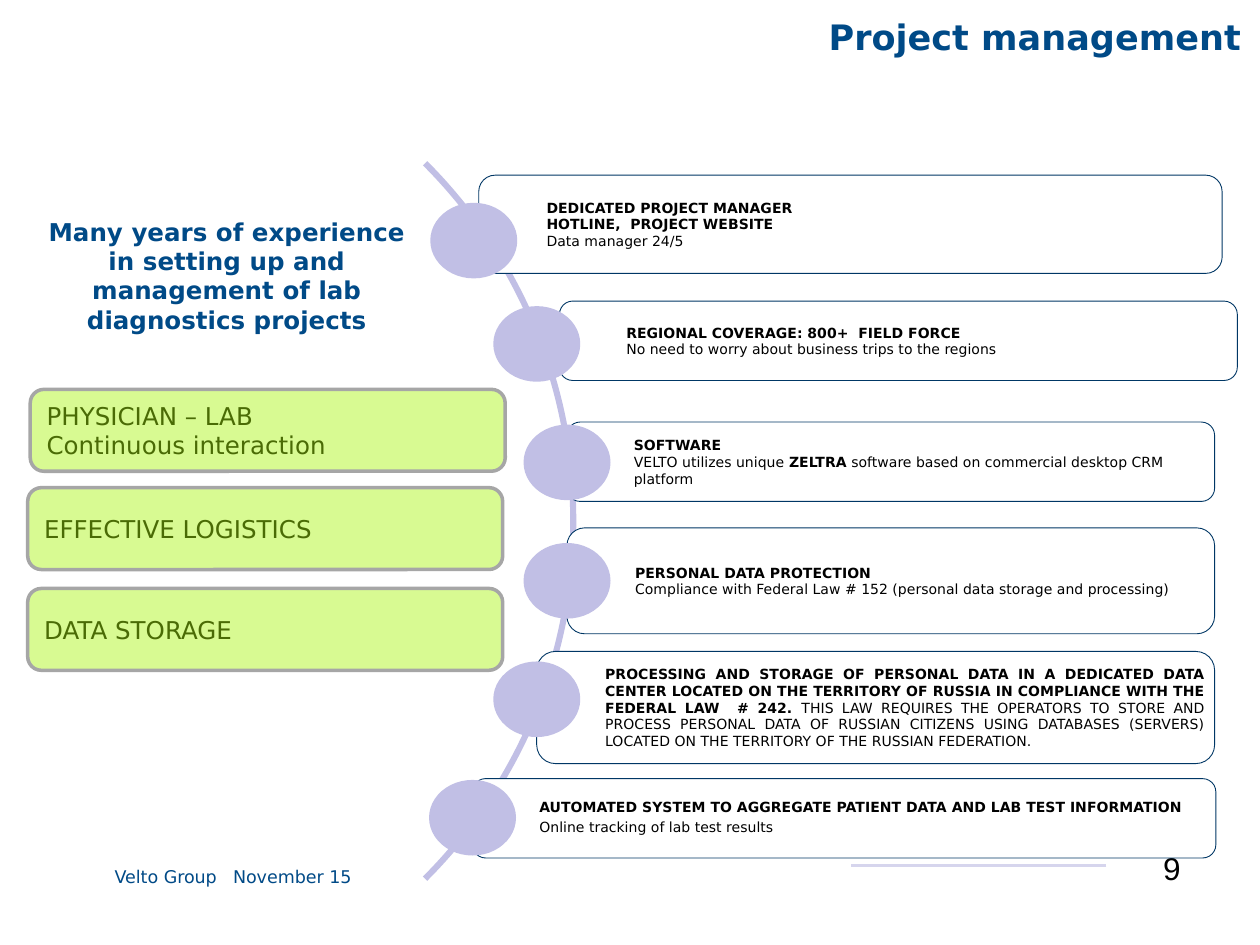
"""Build the project management slide with an arc of six service cards."""
import pptx
import pptx.dml.color
import pptx.enum.shapes
import pptx.enum.text
import pptx.oxml.ns
import pptx.util
from lxml import etree
from pptx.util import Inches

SHAPE = pptx.enum.shapes.MSO_SHAPE
ALIGN = pptx.enum.text.PP_ALIGN
ANCHOR = pptx.enum.text.MSO_ANCHOR
NAVY, LILAC, BLACK = "004A87", "C1BFE5", "000000"


def paint(color_format, color):
    """Apply a hex colour to a fill, line or font colour."""
    color_format.rgb = pptx.dml.color.RGBColor.from_string(color)


def write(frame, paragraphs, size, color, align=ALIGN.LEFT, anchor=ANCHOR.MIDDLE,
          insets=(0.1, 0.05, 0.1, 0.05), font="DejaVu Sans"):
    """Fill a text frame with paragraphs given as lists of (text, bold) runs."""
    frame.word_wrap = True
    frame.auto_size = pptx.enum.text.MSO_AUTO_SIZE.NONE
    frame.vertical_anchor = anchor
    (frame.margin_left, frame.margin_top,
     frame.margin_right, frame.margin_bottom) = map(Inches, insets)
    for index, runs in enumerate(paragraphs):
        para = frame.add_paragraph() if index else frame.paragraphs[0]
        para.alignment = align
        para.font.size = pptx.util.Pt(size)
        para.font.name = font
        paint(para.font.color, color)
        if len({bold for text, bold in runs}) == 1:
            para.font.bold = runs[0][1]
        for text, bold in runs:
            span = para.add_run()
            span.text = text
            if len(runs) > 1:
                span.font.bold = bold


deck = pptx.Presentation()
deck.slide_width, deck.slide_height = Inches(10), Inches(7.5)
page = deck.slides.add_slide(deck.slide_layouts[5])
shapes = page.shapes

title = shapes.title
title.left, title.top, title.width, title.height = map(Inches, (3.54, -0.02, 6.41, 1.73))
write(title.text_frame, [[("Project management", True)]], 20, NAVY, ALIGN.RIGHT,
      ANCHOR.TOP, (0, 0.2, 0.1, 0))
title.text_frame.paragraphs[0].line_spacing = pptx.util.Pt(20)

footers = [
    (0.91, 0.96, "Velto Group", 10, NAVY, ALIGN.LEFT, "DejaVu Sans"),
    (1.85, 0.94, "November 15", 10, NAVY, ALIGN.LEFT, "DejaVu Sans"),
    (8.94, 0.43, "9", 18, BLACK, ALIGN.RIGHT, "Arial"),
]
for left, width, text, size, color, align, font in footers:
    box = shapes.add_textbox(Inches(left), Inches(6.69), Inches(width), Inches(0.35))
    write(box.text_frame, [[(text, False)]], size, color, align, ANCHOR.BOTTOM,
          (0, 0, 0, 0), font)

rule = shapes.add_connector(pptx.enum.shapes.MSO_CONNECTOR.STRAIGHT,
                            Inches(8.78), Inches(6.87), Inches(6.75), Inches(6.87))
paint(rule.line.color, "D6D5ED")
rule.line.width = pptx.util.Pt(2)
etree.SubElement(rule._element.spPr, pptx.oxml.ns.qn("a:effectLst"))

arc = shapes.add_shape(SHAPE.ARC, Inches(-3.48), Inches(0.12), Inches(8.03), Inches(8.03))
arc.shadow.inherit = False
arc.adjustments[0] = 315 * 0.6
arc.adjustments[1] = 45 * 0.6
arc.fill.background()
paint(arc.line.color, LILAC)
arc.line.width = pptx.util.Pt(3.5)

cards = [
    (3.8, 1.39, 5.9, 0.78, 3.76, 1.91,
     [[("DEDICATED PROJECT MANAGER", True)], [("HOTLINE,  PROJECT WEBSITE", True)],
      [("Data manager 24/5", False)]]),
    (4.44, 2.39, 5.38, 0.63, 4.26, 2.73,
     [[("REGIONAL COVERAGE: 800+  FIELD FORCE", True)],
      [("No need to worry about business trips to the regions", False)]]),
    (4.5, 3.35, 5.14, 0.63, 4.5, 3.67,
     [[("SOFTWARE", True)],
      [("VELTO utilizes unique ", False), ("ZELTRA", True),
       (" software based on commercial desktop CRM platform", False)]]),
    (4.5, 4.19, 5.14, 0.84, 4.5, 4.61,
     [[("PERSONAL DATA PROTECTION", True)],
      [("Compliance with Federal Law # 152 (personal data storage and processing)", False)]]),
    (4.26, 5.17, 5.38, 0.89, 4.26, 5.55,
     [[("PROCESSING AND STORAGE OF PERSONAL DATA IN A DEDICATED DATA CENTER LOCATED ON "
        "THE TERRITORY OF RUSSIA IN COMPLIANCE WITH THE FEDERAL LAW  # 242. ", True),
       ("THIS LAW REQUIRES THE OPERATORS TO STORE AND PROCESS PERSONAL DATA OF RUSSIAN "
        "CITIZENS USING DATABASES (SERVERS) LOCATED ON THE TERRITORY OF THE RUSSIAN "
        "FEDERATION.", False)]]),
    (3.75, 6.18, 5.9, 0.63, 3.75, 6.49,
     [[("AUTOMATED SYSTEM TO AGGREGATE PATIENT DATA AND LAB TEST INFORMATION", True)],
      [("Online tracking of lab test results", False)]]),
]
dot_width, dot_height = 0.69, 0.6
for left, top, width, height, dot_x, dot_y, paragraphs in cards:
    card = shapes.add_shape(SHAPE.ROUNDED_RECTANGLE, Inches(left), Inches(top),
                            Inches(width), Inches(height))
    card.shadow.inherit = False
    card.fill.solid()
    paint(card.fill.fore_color, "FFFFFF")
    paint(card.line.color, "003765")
    card.line.width = pptx.util.Pt(0.5)
    align = ALIGN.JUSTIFY if len(paragraphs) == 1 else ALIGN.LEFT
    write(card.text_frame, paragraphs, 8, BLACK, align, insets=(0.5, 0.03, 0.03, 0.03))

    dot = shapes.add_shape(SHAPE.OVAL, Inches(dot_x - dot_width / 2),
                           Inches(dot_y - dot_height / 2),
                           Inches(dot_width), Inches(dot_height))
    dot.shadow.inherit = False
    dot.fill.solid()
    paint(dot.fill.fore_color, LILAC)
    dot.line.fill.background()

for para in card.text_frame.paragraphs:
    para.line_spacing = 0.9
    para.space_after = pptx.util.Pt(3)

claim = shapes.add_textbox(Inches(0.16), Inches(1.67), Inches(3.28), Inches(0.81))
write(claim.text_frame,
      [[("Many years of experience in setting up and management of lab diagnostics projects",
         True)]], 14, NAVY, ALIGN.CENTER, ANCHOR.TOP)

strengths = [
    (0.24, 3.09, ["PHYSICIAN – LAB", "Continuous interaction"]),
    (0.22, 3.87, ["EFFECTIVE LOGISTICS"]),
    (0.22, 4.67, ["DATA STORAGE"]),
]
for left, top, lines in strengths:
    strength = shapes.add_shape(SHAPE.ROUNDED_RECTANGLE, Inches(left), Inches(top),
                                Inches(3.77), Inches(0.65))
    strength.shadow.inherit = False
    strength.fill.solid()
    paint(strength.fill.fore_color, "D8FA92")
    paint(strength.line.color, "A6A6A6")
    strength.line.width = pptx.util.Pt(2)
    write(strength.text_frame, [[(line, False)] for line in lines], 14, "4A6B05")

deck.save("out.pptx")
